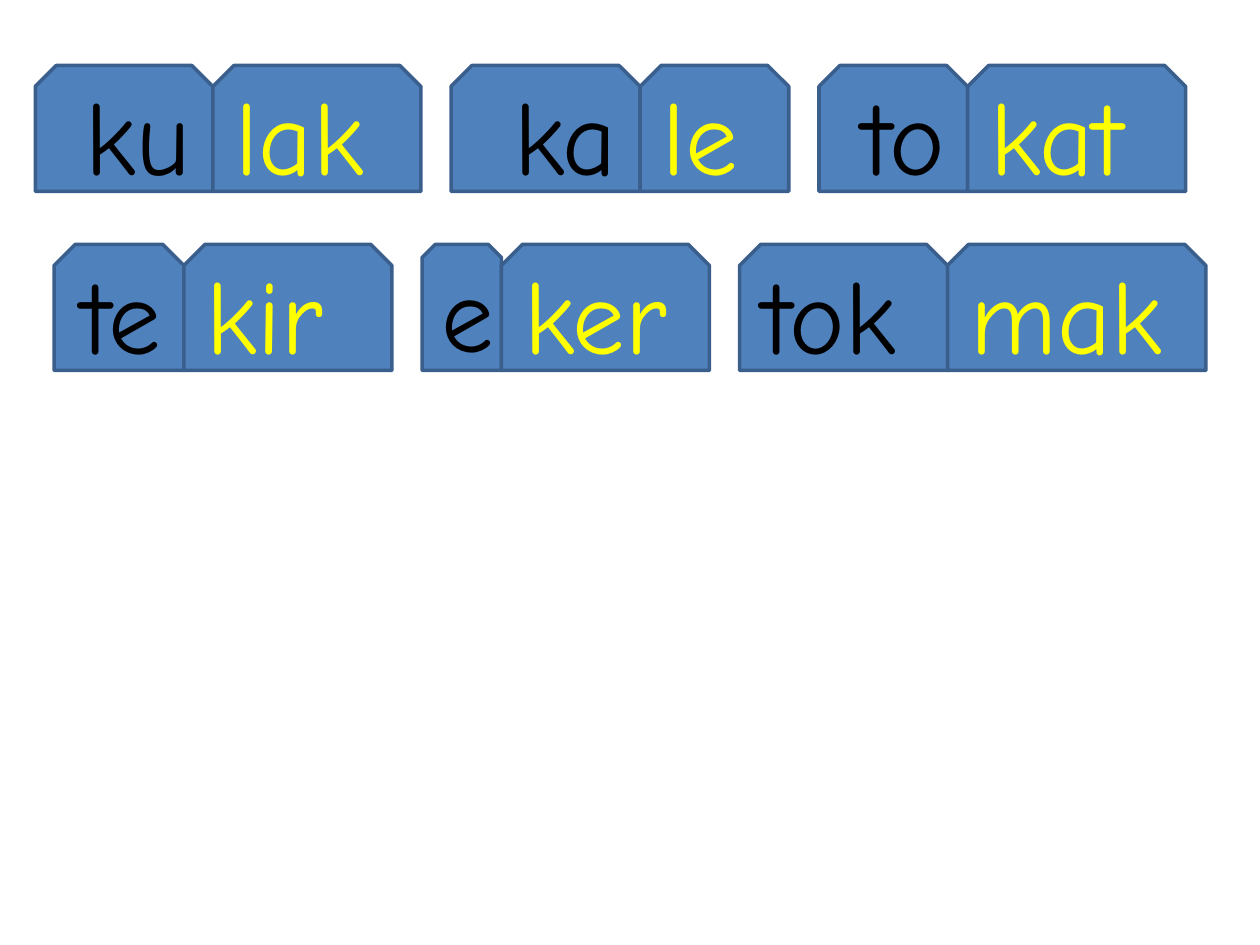
"""Build a slide of two-syllable words set on pairs of snipped tiles."""
from pptx import Presentation
from pptx import util as u
from pptx.dml.color import RGBColor
from pptx.enum import shapes, text

theme = {
    "font": "Comic Neue",
    "size": 60,
    "fill": RGBColor.from_string("4F81BD"),
    "line": RGBColor.from_string("3A5F8C"),
    "first": RGBColor.from_string("000000"),
    "last": RGBColor.from_string("FFFF00"),
}
left, right = text.PP_ALIGN.LEFT, text.PP_ALIGN.RIGHT
gap, high = 0.24, 1

rows = [
    (0.28, 0.52, [
        (("ku", 1.41, right), ("lak", 1.65, left)),
        (("ka", 1.5, right), ("le", 1.18, left)),
        (("to", 1.18, right), ("kat", 1.73, left)),
    ]),
    (0.43, 1.94, [
        (("te", 1.03, right), ("kir", 1.65, left)),
        (("e", 0.63, right), ("ker", 1.65, left)),
        (("tok", 1.65, left), ("mak", 2.05, left)),
    ]),
]

deck = Presentation()
deck.slide_width, deck.slide_height = u.Inches(10), u.Inches(7.5)
slide = deck.slides.add_slide(deck.slide_layouts[6])

for x, y, words in rows:
    for word in words:
        for part, (label, wide, align) in zip(("first", "last"), word):
            tile = slide.shapes.add_shape(
                shapes.MSO_SHAPE.SNIP_2_SAME_RECTANGLE,
                u.Inches(x), u.Inches(y), u.Inches(wide), u.Inches(high))
            tile.shadow.inherit = False
            tile.fill.solid()
            tile.fill.fore_color.rgb = theme["fill"]
            tile.line.color.rgb = theme["line"]
            tile.line.width = u.Pt(2)
            frame = tile.text_frame
            frame.text = label
            frame.word_wrap = True
            frame.vertical_anchor = text.MSO_ANCHOR.MIDDLE
            para = frame.paragraphs[0]
            para.alignment = align
            font = para.runs[0].font
            font.name = theme["font"]
            font.size = u.Pt(theme["size"])
            font.color.rgb = theme[part]
            x += wide
        x += gap

deck.save("out.pptx")
